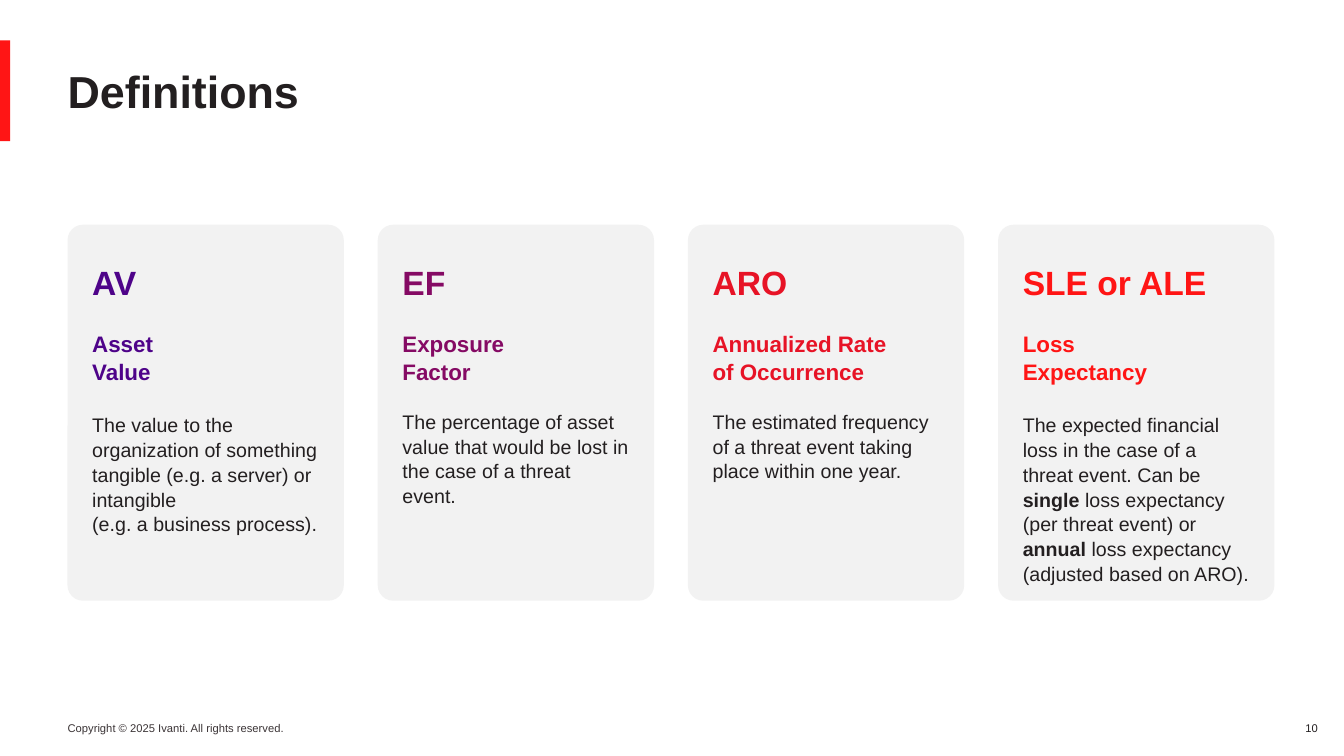
"""Build the Definitions slide with four cards for risk terms."""
from pptx import Presentation
from pptx import util as u
from pptx.dml.color import RGBColor
from pptx.enum import shapes, text

INK = "231F20"
RED = "FF1515"
CARDS = [
    ("AV", "Asset\nValue", "4E0389", 19.3,
     "The value to the organization of something tangible (e.g. a server) or intangible\n"
     "(e.g. a business process)."),
    ("EF", "Exposure\nFactor", "850A64", 16.9,
     "The percentage of asset value that would be lost in the case of a threat event."),
    ("ARO", "Annualized Rate\nof Occurrence", "E71326", 16.9,
     "The estimated frequency of a threat event taking place within one year."),
    ("SLE or ALE", "Loss\nExpectancy", RED, 19.3,
     "The expected financial loss in the case of a threat event. Can be **single** loss "
     "expectancy (per threat event) or **annual** loss expectancy (adjusted based on ARO)."),
]
LEFT, RIGHT, CARD_TOP = 0.67, 12.64, 2.23
CARD_WIDTH, CARD_HEIGHT = 2.74, 3.73


def color(value):
    return RGBColor.from_string(value)


def write(para, words, size=14, fill=INK, bold=False, before=0, line=1.0,
          align=text.PP_ALIGN.LEFT):
    para.alignment, para.line_spacing = align, line
    if before:
        para.space_before = u.Pt(before)
    for index, part in enumerate(words.split("**")):
        for row, piece in enumerate(part.split("\n")):
            if row:
                para.add_line_break()
            span = para.add_run()
            span.text = piece
            span.font.name, span.font.size = "Arial", u.Pt(size)
            span.font.bold = bold or index % 2 == 1
            span.font.color.rgb = color(fill)


def set_frame(box, insets, anchor=text.MSO_ANCHOR.TOP, wrap=True):
    frame = box.text_frame
    frame.word_wrap, frame.vertical_anchor = wrap, anchor
    (frame.margin_left, frame.margin_top,
     frame.margin_right, frame.margin_bottom) = map(u.Inches, insets)
    return frame


def add_block(page, kind, place, fill):
    block = page.shapes.add_shape(kind, *map(u.Inches, place))
    block.shadow.inherit = False
    block.fill.solid()
    block.fill.fore_color.rgb = color(fill)
    block.line.fill.background()
    return block


def add_label(page, place, words, insets=(0, 0.05, 0.1, 0.05),
              anchor=text.MSO_ANCHOR.TOP, wrap=True, **style):
    box = page.shapes.add_textbox(*map(u.Inches, place))
    write(set_frame(box, insets, anchor, wrap).paragraphs[0], words, **style)


def add_card(page, left, term, name, accent, gap, meaning):
    card = add_block(page, shapes.MSO_SHAPE.ROUNDED_RECTANGLE,
                     (left, CARD_TOP, CARD_WIDTH, CARD_HEIGHT), "F2F2F2")
    card.adjustments[0] = 0.056
    frame = set_frame(card, (0.2, 0.3, 0.2, 0))
    write(frame.paragraphs[0], term, size=24, fill=accent, bold=True, line=1.05)
    write(frame.add_paragraph(), name, size=16, fill=accent, bold=True,
          before=19.3, line=1.05)
    write(frame.add_paragraph(), meaning, before=gap, line=1.05)


def main():
    deck = Presentation()
    deck.slide_width, deck.slide_height = u.Inches(13.33), u.Inches(7.5)
    page = deck.slides.add_slide(deck.slide_layouts[6])
    add_label(page, (LEFT, 7.11, 2.28, 0.24),
              "Copyright © 2025 Ivanti. All rights reserved.",
              wrap=False, size=8, fill="3B3436")
    add_block(page, shapes.MSO_SHAPE.RECTANGLE, (0, 0.4, 0.1, 1), RED)
    add_label(page, (12.69, 7.11, 0.48, 0.24), "10", size=8,
              align=text.PP_ALIGN.RIGHT)
    add_label(page, (LEFT, 0.59, 12.01, 0.62), "Definitions", (0, 0, 0.1, 0),
              text.MSO_ANCHOR.MIDDLE, size=32, bold=True)
    pitch = (RIGHT - CARD_WIDTH - LEFT) / (len(CARDS) - 1)
    for index, card in enumerate(CARDS):
        add_card(page, LEFT + index * pitch, *card)
    deck.save("out.pptx")


if __name__ == "__main__":
    main()
